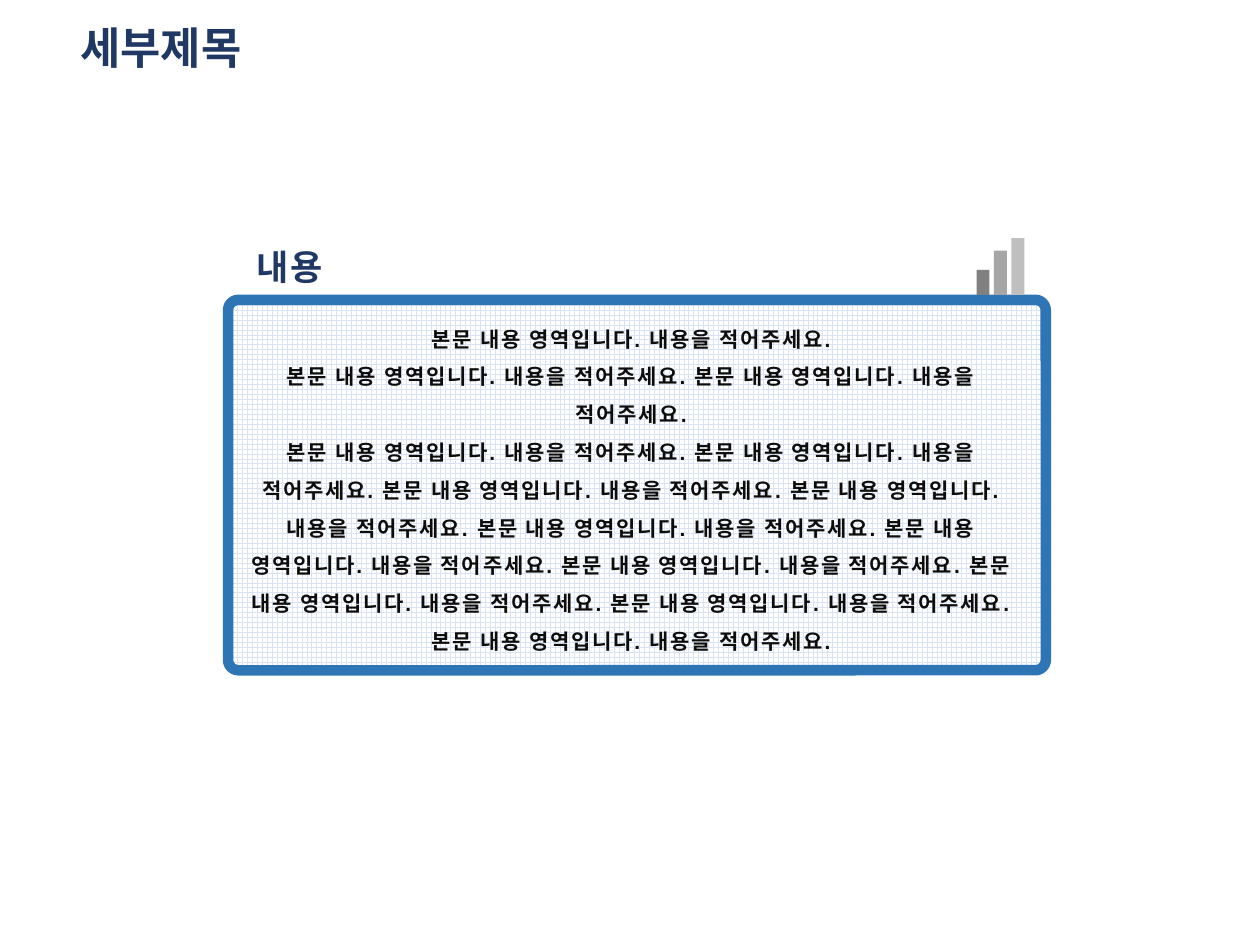
import pptx
import pptx.dml.color
import pptx.enum.dml
import pptx.enum.shapes
import pptx.enum.text
import pptx.util

NAVY = pptx.dml.color.RGBColor(0x20, 0x38, 0x64)
BLUE = pptx.dml.color.RGBColor(0x2E, 0x75, 0xB6)
PALE_BLUE = pptx.dml.color.RGBColor(0xDA, 0xE3, 0xF3)
WHITE = pptx.dml.color.RGBColor(0xFF, 0xFF, 0xFF)
BLACK = pptx.dml.color.RGBColor(0x0D, 0x0D, 0x0D)
DARK_GRAY = pptx.dml.color.RGBColor(0x80, 0x80, 0x80)
MID_GRAY = pptx.dml.color.RGBColor(0xA6, 0xA6, 0xA6)
LIGHT_GRAY = pptx.dml.color.RGBColor(0xBF, 0xBF, 0xBF)

SHAPE = pptx.enum.shapes.MSO_SHAPE
ALIGN = pptx.enum.text.PP_ALIGN
SENTENCE = "본문 내용 영역입니다. 내용을 적어주세요."
REPEATS = (1, 2, 10)


def inches(*lengths):
    """Convert lengths in inches to slide units."""
    return [pptx.util.Inches(length) for length in lengths]


def format_paragraph(paragraph, font_name, size, color, align, line_spacing):
    """Give a paragraph its bold font, alignment and line spacing."""
    paragraph.alignment = align
    paragraph.line_spacing = line_spacing
    font = paragraph.font
    font.name, font.size, font.bold = font_name, pptx.util.Pt(size), True
    font.color.rgb = color


def add_title(slide, box, text):
    """Place and format the title placeholder."""
    title = slide.shapes.title
    title.left, title.top, title.width, title.height = inches(*box)
    frame = title.text_frame
    frame.text = text
    frame.vertical_anchor = pptx.enum.text.MSO_ANCHOR.MIDDLE
    format_paragraph(frame.paragraphs[0], "Calibri", 25, NAVY, ALIGN.LEFT, 0.9)


def add_spaced_text(slide, box, texts, size, color, line_spacing):
    """Add centred paragraphs with one point between letters."""
    frame = slide.shapes.add_textbox(*inches(*box)).text_frame
    frame.word_wrap = True
    frame.text = "\n".join(texts)
    for paragraph in frame.paragraphs:
        format_paragraph(paragraph, "Arial", size, color, ALIGN.CENTER, line_spacing)
        for run in paragraph.runs:
            run._r.get_or_add_rPr().set("spc", "100")


def add_panel(slide, box):
    """Add the rounded grid panel with its heading and body text."""
    left, top, width, height = box
    panel = slide.shapes.add_shape(SHAPE.ROUNDED_RECTANGLE, *inches(*box))
    panel.shadow.inherit = False
    panel.adjustments[0] = 0.028
    panel.fill.patterned()
    panel.fill.pattern = pptx.enum.dml.MSO_PATTERN.LARGE_GRID
    panel.fill.fore_color.rgb = PALE_BLUE
    panel.fill.back_color.rgb = WHITE
    panel.line.color.rgb = BLUE
    panel.line.width = pptx.util.Pt(6)

    heading_box = (left, top - 0.48, width * 0.15, 0.44)
    add_spaced_text(slide, heading_box, ["내용"], 20, NAVY, 1)
    body_box = (left, top + 0.06, width - 0.09, height - 0.11)
    body = [" ".join([SENTENCE] * count) for count in REPEATS]
    add_spaced_text(slide, body_box, body, 12, BLACK, 1.5)


def add_bars(slide, box):
    """Add three rising gray bars standing on the bottom of the box."""
    left, top, width, height = box
    bar_width = width * 0.27
    step = (width - bar_width) / 2
    bars = ((0.44, DARK_GRAY), (0.78, MID_GRAY), (1, LIGHT_GRAY))
    for column, (share, color) in enumerate(bars):
        bar_top = top + height * (1 - share)
        bar = slide.shapes.add_shape(
            SHAPE.RECTANGLE,
            *inches(left + column * step, bar_top, bar_width, height * share),
        )
        bar.shadow.inherit = False
        bar.fill.solid()
        bar.fill.fore_color.rgb = color
        bar.line.fill.background()


def main():
    """Build and save the slide."""
    presentation = pptx.Presentation()
    presentation.slide_width, presentation.slide_height = inches(10, 7.5)
    slide = presentation.slides.add_slide(presentation.slide_layouts[5])
    add_title(slide, (0.54, 0.21, 8.62, 0.38), "세부제목")
    add_panel(slide, (1.81, 2.38, 6.49, 2.94))
    add_bars(slide, (7.75, 1.89, 0.38, 0.45))
    presentation.save("out.pptx")


if __name__ == "__main__":
    main()
